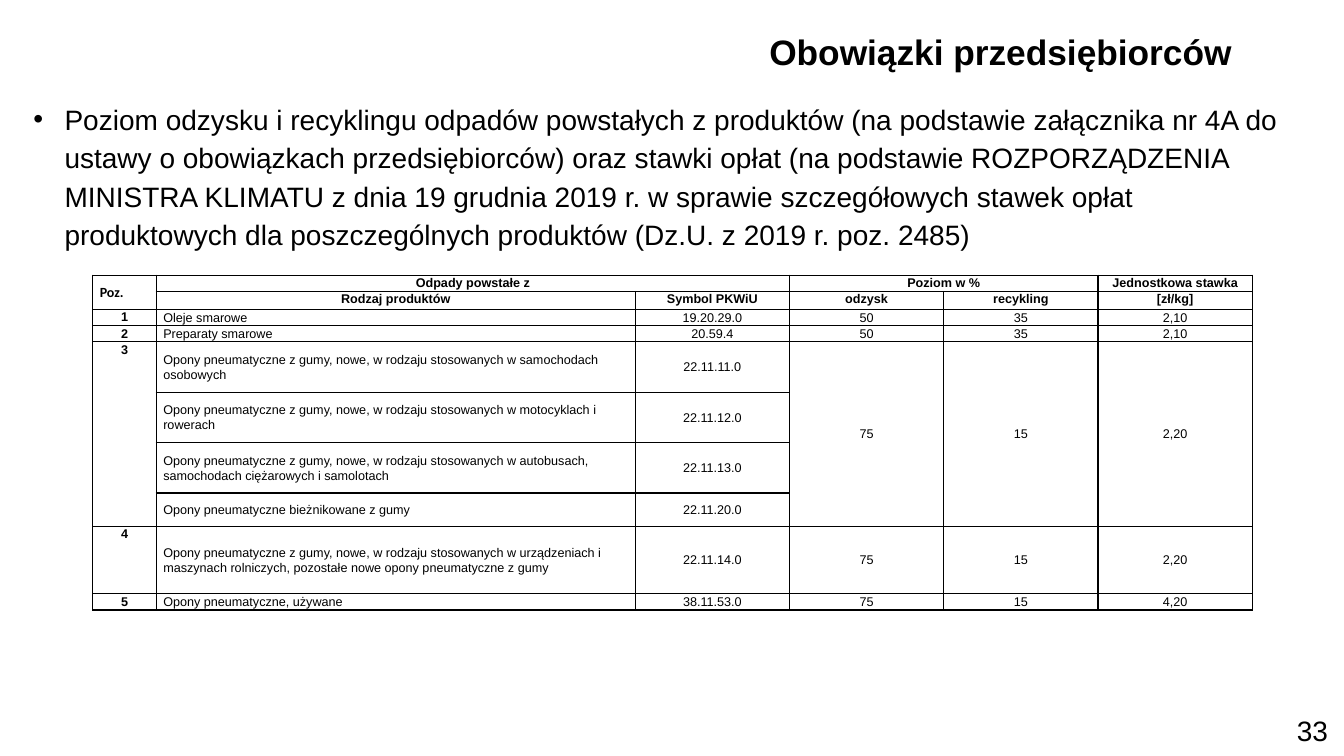
"""Builds the slide on recovery and recycling levels with product fee rates."""
from dataclasses import dataclass

from lxml import etree
from pptx import Presentation
from pptx.dml.color import RGBColor
from pptx.enum.text import MSO_ANCHOR as Anchor, MSO_AUTO_SIZE as AutoSize, PP_ALIGN as Align
from pptx.oxml.ns import qn
from pptx.util import Inches, Pt


@dataclass(frozen=True)
class Theme:
    ink: RGBColor = RGBColor(0, 0, 0)
    paper: RGBColor = RGBColor(255, 255, 255)
    font: str = "Arial"
    position_font: str = "Calibri"
    title: float = 25.2
    body: float = 20
    cell: float = 9
    position: float = 10
    border: float = 1


HEADING = "Obowiązki przedsiębiorców"
INTRO = (
    "Poziom odzysku i recyklingu odpadów powstałych z produktów (na podstawie załącznika nr 4A do "
    "ustawy o obowiązkach przedsiębiorców) oraz stawki opłat (na podstawie ROZPORZĄDZENIA "
    "MINISTRA KLIMATU z dnia 19 grudnia 2019 r. w sprawie szczegółowych stawek opłat "
    "produktowych dla poszczególnych produktów (Dz.U. z 2019 r. poz. 2485)"
)
NEW_TYRES = "Opony pneumatyczne z gumy, nowe, w rodzaju stosowanych w "
RATES = [
    ["Poz.", "Odpady powstałe z", "", "Poziom w %", "", "Jednostkowa stawka"],
    ["", "Rodzaj produktów", "Symbol PKWiU", "odzysk", "recykling", "[zł/kg]"],
    ["1", "Oleje smarowe", "19.20.29.0", "50", "35", "2,10"],
    ["2", "Preparaty smarowe", "20.59.4", "50", "35", "2,10"],
    ["3", NEW_TYRES + "samochodach osobowych", "22.11.11.0", "75", "15", "2,20"],
    ["", NEW_TYRES + "motocyklach i rowerach", "22.11.12.0", "", "", ""],
    ["", NEW_TYRES + "autobusach, samochodach ciężarowych i samolotach", "22.11.13.0", "", "", ""],
    ["", "Opony pneumatyczne bieżnikowane z gumy", "22.11.20.0", "", "", ""],
    ["4", NEW_TYRES + "urządzeniach i maszynach rolniczych, pozostałe nowe opony pneumatyczne z gumy",
     "22.11.14.0", "75", "15", "2,20"],
    ["5", "Opony pneumatyczne, używane", "38.11.53.0", "75", "15", "4,20"],
]
COLUMN_WIDTHS = [0.63, 4.75] + [1.53] * 4
ROW_HEIGHTS = [0.16] * 4 + [0.5] * 3 + [0.33, 0.67, 0.16]
HEADER_ROWS = 2
FIRST_TYRE_ROW = 4
MERGES = [((0, 0), (1, 0)), ((0, 1), (0, 2)), ((0, 3), (0, 4))]
MERGES += [((4, column), (7, column)) for column in (0, 3, 4, 5)]


def write(frame, text, size, color, font="Arial", bold=False, align=Align.LEFT,
          spacing=1.0, before=0, after=0, bullet=None, indent=0):
    """Write one formatted paragraph into a text frame."""
    frame.word_wrap = True
    paragraph = frame.paragraphs[0]
    paragraph.alignment = align
    paragraph.line_spacing = spacing
    paragraph.space_before, paragraph.space_after = Pt(before), Pt(after)
    if bullet:
        properties = paragraph._p.get_or_add_pPr()
        properties.set("marL", str(Inches(indent)))
        properties.set("indent", str(-Inches(indent)))
        etree.SubElement(properties, qn("a:buFont"), typeface=font)
        etree.SubElement(properties, qn("a:buChar"), char=bullet)
    run = paragraph.add_run()
    run.text = text
    run.font.name, run.font.size, run.font.bold = font, Pt(size), bold
    run.font.color.rgb = color


def outline(cell, color, width):
    """Draw a line on all four sides of a cell."""
    properties = cell._tc.get_or_add_tcPr()
    for side in ("lnL", "lnR", "lnT", "lnB"):
        line = etree.SubElement(properties, qn(f"a:{side}"), w=str(Pt(width)))
        fill = etree.SubElement(line, qn("a:solidFill"))
        etree.SubElement(fill, qn("a:srgbClr"), val=str(color))


class SlideBuilder:
    """Holds the theme and the current slide."""

    def __init__(self, slide, theme):
        self.slide, self.theme = slide, theme

    def place(self, holder, left, top, width, height, anchor):
        """Move a placeholder and return its text frame."""
        holder.left, holder.top = Inches(left), Inches(top)
        holder.width, holder.height = Inches(width), Inches(height)
        frame = holder.text_frame
        frame.auto_size = AutoSize.NONE
        frame.vertical_anchor = anchor
        return frame

    def title(self, text, *box):
        """Fill the title placeholder."""
        frame = self.place(self.slide.shapes.title, *box, Anchor.MIDDLE)
        write(frame, text, self.theme.title, self.theme.ink, self.theme.font, bold=True, spacing=0.9)

    def body(self, text, *box):
        """Fill the body placeholder with one bullet."""
        frame = self.place(self.slide.placeholders[1], *box, Anchor.TOP)
        write(frame, text, self.theme.body, self.theme.ink, self.theme.font,
              spacing=1.14, before=0, after=12, bullet="•", indent=0.31)

    def page_number(self, text, *box):
        """Add the page number."""
        frame = self.slide.shapes.add_textbox(*map(Inches, box)).text_frame
        write(frame, text, self.theme.body, self.theme.ink, self.theme.font, align=Align.RIGHT)

    def rates_table(self, rows, left, top):
        """Add the table of levels and rates."""
        table = self.slide.shapes.add_table(
            len(rows), len(COLUMN_WIDTHS), Inches(left), Inches(top),
            Inches(sum(COLUMN_WIDTHS)), Inches(sum(ROW_HEIGHTS))).table
        table.first_row = table.horz_banding = False
        for column, width in zip(table.columns, COLUMN_WIDTHS):
            column.width = Inches(width)
        for row, height in zip(table.rows, ROW_HEIGHTS):
            row.height = Inches(height)
        for r, texts in enumerate(rows):
            for c, text in enumerate(texts):
                self.rate_cell(table.cell(r, c), r, c, text)
        for first, last in MERGES:
            table.cell(*first).merge(table.cell(*last))

    def rate_cell(self, cell, row, column, text):
        """Format one table cell by its row and column."""
        theme = self.theme
        corner = row == 0 and column == 0
        header = row < HEADER_ROWS
        cell.margin_left = cell.margin_right = Inches(0.07)
        cell.margin_top = cell.margin_bottom = 0
        centred = corner or (not header and column > 0)
        cell.vertical_anchor = Anchor.MIDDLE if centred else Anchor.TOP
        outline(cell, theme.ink, theme.border)
        if row >= FIRST_TYRE_ROW and column in (1, 2):
            cell.fill.solid()
            cell.fill.fore_color.rgb = theme.paper
        else:
            cell.fill.background()
        if text:
            product = not header and column == 1
            write(cell.text_frame, text, theme.position if corner else theme.cell, theme.ink,
                  theme.position_font if corner else theme.font, bold=header or column == 0,
                  align=Align.LEFT if corner or product else Align.CENTER, spacing=1.07)


def main():
    """Build and save the slide."""
    deck = Presentation()
    deck.slide_width, deck.slide_height = Inches(13.33), Inches(7.5)
    builder = SlideBuilder(deck.slides.add_slide(deck.slide_layouts[1]), Theme())
    builder.title(HEADING, 7.53, 0.16, 5.28, 0.75)
    builder.body(INTRO, 0.23, 0.92, 12.9, 6.19)
    builder.page_number("33", 12.56, 7.03, 0.71, 0.42)
    builder.rates_table(RATES, 0.92, 2.73)
    deck.save("out.pptx")


if __name__ == "__main__":
    main()
